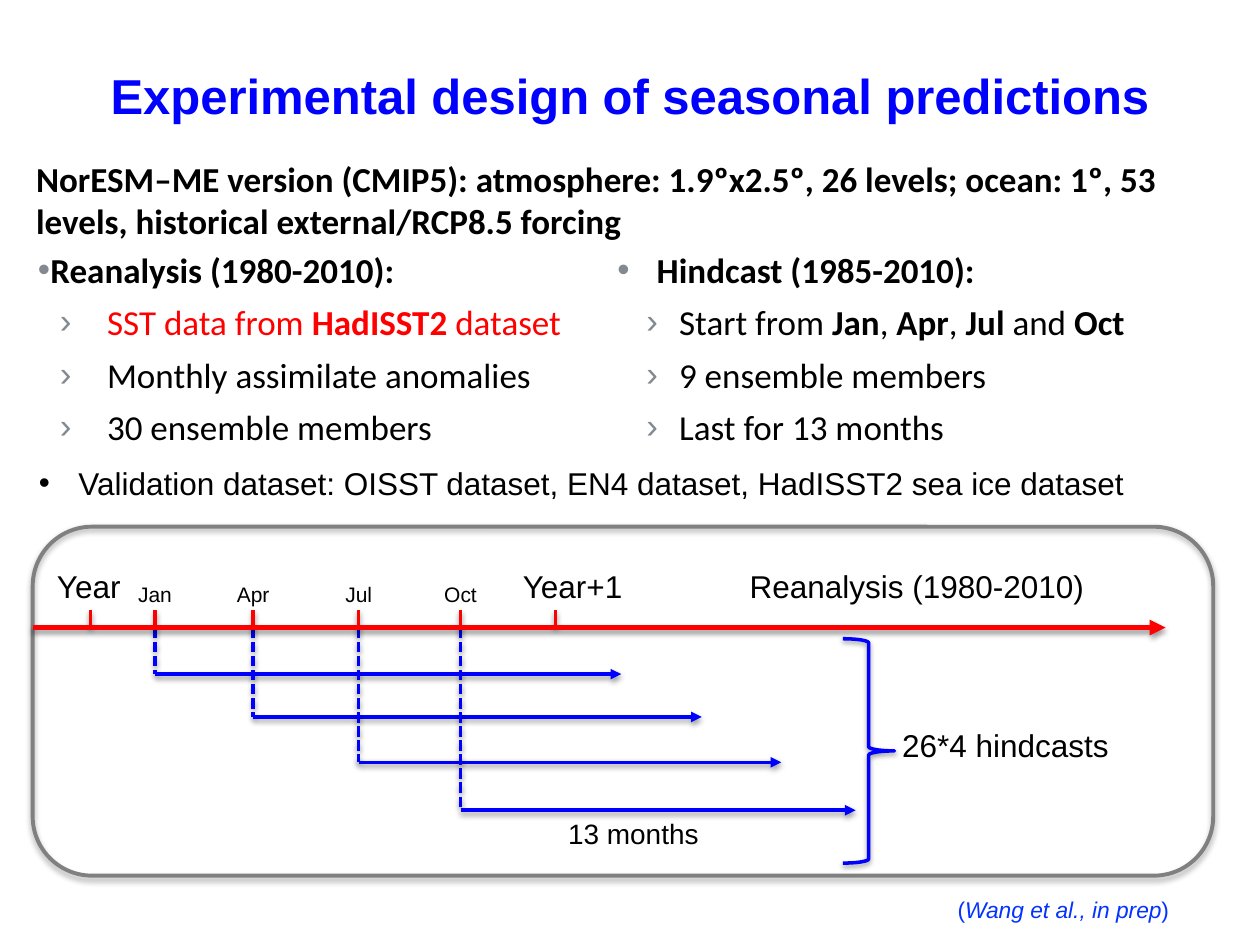
from lxml.etree import SubElement
from pptx import Presentation
from pptx.dml.color import RGBColor
from pptx.enum.dml import MSO_LINE
from pptx.enum.shapes import MSO_CONNECTOR, MSO_SHAPE
from pptx.enum.text import MSO_ANCHOR, PP_ALIGN
from pptx.oxml.ns import qn
from pptx.util import Pt

BLACK, BLUE, RED = "000000", "0000FF", "FF0000"
GREY, BULLET_GREY, CITE_BLUE = "808080", "828990", "0432FF"


def rgb(value):
    return RGBColor.from_string(value)


class SlideBuilder:
    heading_font = "Arial"
    body_font = "Calibri"

    def __init__(self, slide):
        self.slide = slide

    def text(self, box, lines, size=18, font=heading_font, color=BLACK, inset=3.6,
             align=PP_ALIGN.LEFT, anchor=MSO_ANCHOR.TOP, wrap=True, emphasis="bold"):
        frame = self.slide.shapes.add_textbox(*map(Pt, box)).text_frame
        frame.word_wrap = wrap
        frame.vertical_anchor = anchor
        frame.margin_left = frame.margin_right = Pt(inset)
        frame.margin_top = frame.margin_bottom = Pt(min(inset, 3.6))
        for index, line in enumerate(lines):
            paragraph = frame.add_paragraph() if index else frame.paragraphs[0]
            paragraph.alignment = align
            if index:
                paragraph.space_before = Pt(6)
            content, bullet, line_color = line if isinstance(line, tuple) else (line, None, color)
            if bullet:
                self.bullet(paragraph, *bullet)
            for position, piece in enumerate(content.split("|")):
                if piece:
                    run = paragraph.add_run()
                    run.text = piece
                    run.font.name = font
                    run.font.size = Pt(size)
                    run.font.color.rgb = rgb(line_color)
                    setattr(run.font, emphasis, position % 2 == 1)

    def bullet(self, paragraph, mark, left, hang, color):
        properties = paragraph._p.get_or_add_pPr()
        properties.set("marL", str(Pt(left)))
        properties.set("indent", str(-Pt(hang)))
        SubElement(SubElement(properties, qn("a:buClr")), qn("a:srgbClr"), val=color)
        SubElement(properties, qn("a:buFont"), typeface=self.heading_font)
        SubElement(properties, qn("a:buChar"), char=mark)

    def shadow(self, drawn, alpha, distance):
        effects = SubElement(drawn._element.spPr, qn("a:effectLst"))
        outer = SubElement(effects, qn("a:outerShdw"), blurRad=str(Pt(3)),
                           dist=str(Pt(distance)), dir="5400000", rotWithShape="0")
        tint = SubElement(outer, qn("a:srgbClr"), val=BLACK)
        SubElement(tint, qn("a:alpha"), val=str(alpha * 1000))

    def line(self, start, end, color, width=2, dashed=False, arrow=False):
        drawn = self.slide.shapes.add_connector(
            MSO_CONNECTOR.STRAIGHT, *map(Pt, (*start, *end)))
        drawn.line.color.rgb = rgb(color)
        drawn.line.width = Pt(width)
        if dashed:
            drawn.line.dash_style = MSO_LINE.SQUARE_DOT
        if arrow:
            SubElement(drawn._element.spPr.find(qn("a:ln")), qn("a:tailEnd"), type="triangle")
        self.shadow(drawn, 38, 1.6)

    def outline(self, preset, box, color, width, adjustment, alpha, distance):
        drawn = self.slide.shapes.add_shape(preset, *map(Pt, box))
        drawn.adjustments[0] = adjustment
        drawn.fill.background()
        drawn.line.color.rgb = rgb(color)
        drawn.line.width = Pt(width)
        self.shadow(drawn, alpha, distance)


def main():
    presentation = Presentation()
    presentation.slide_width, presentation.slide_height = Pt(720), Pt(540)
    builder = SlideBuilder(presentation.slides.add_slide(presentation.slide_layouts[6]))

    builder.text((42.5, 32.4, 635, 38.9), ["|Experimental design of seasonal predictions"],
                 size=28, color=BLUE, inset=0, align=PP_ALIGN.CENTER, anchor=MSO_ANCHOR.BOTTOM)
    builder.text((13.5, 86.4, 686, 55.4),
                 ["|NorESM–ME version (CMIP5): atmosphere: 1.9ºx2.5º, 26 levels; "
                  "ocean: 1º, 53 levels, historical external/RCP8.5 forcing"],
                 size=20, font=builder.body_font, inset=7.2)

    reanalysis_head = ("•", 7.2, 7.2, BULLET_GREY)
    reanalysis_item = ("›", 39.6, 27, BULLET_GREY)
    hindcast_head = ("•", 22.5, 22.5, BULLET_GREY)
    hindcast_item = ("›", 35.3, 18.7, BULLET_GREY)
    columns = [
        (21.6, [("|Reanalysis (1980-2010):", reanalysis_head, BLACK),
                ("SST data from |HadISST2| dataset", reanalysis_item, RED),
                ("Monthly assimilate anomalies", reanalysis_item, BLACK),
                ("30 ensemble members", reanalysis_item, BLACK)]),
        (352.8, [("|Hindcast (1985-2010):", hindcast_head, BLACK),
                 ("Start from |Jan|, |Apr|, |Jul| and |Oct", hindcast_item, BLACK),
                 ("9 ensemble members", hindcast_item, BLACK),
                 ("Last for 13 months", hindcast_item, BLACK)]),
    ]
    for left, lines in columns:
        builder.text((left, 141.8, 357, 134.6), lines, size=20, font=builder.body_font, inset=0)
    builder.text((18.7, 261.4, 700, 28.8),
                 [("Validation dataset: OISST dataset, EN4 dataset, HadISST2 sea ice dataset",
                   ("•", 22.5, 22.5, BLACK), BLACK)])

    builder.outline(MSO_SHAPE.ROUNDED_RECTANGLE, (18.7, 301, 674.6, 199.4), GREY, 2.25, 0.17, 35, 1.8)
    axis, tick_top = 358.6, 348.8
    starts = [("Jan", 88.6, 385.2, 355), ("Apr", 144.7, 409.7, 401),
              ("Jul", 205, 435.6, 446.4), ("Oct", 263.2, 463, 488.9)]
    for month, start, row, finish in starts:
        builder.text((start - 14, 329, 28, 21.6), [month], size=12,
                     align=PP_ALIGN.CENTER, wrap=False)
        builder.line((start, axis), (start, row), BLUE, dashed=True)
        builder.line((start, row), (finish, row), BLUE, arrow=True)
    for tick in [51.8, 317.5] + [start for _, start, _, _ in starts]:
        builder.line((tick, tick_top), (tick, axis), RED)
    builder.line((18.7, axis), (666, axis), RED, width=3, arrow=True)

    builder.text((21.6, 320.4, 58.3, 31), ["Year"], align=PP_ALIGN.CENTER)
    builder.text((295.2, 320.4, 77, 31), ["Year+1"])
    builder.text((424.8, 320.4, 232.6, 28.8), ["Reanalysis (1980-2010)"])
    builder.text((321.1, 463, 98.6, 28), ["13 months"], size=16)
    builder.outline(MSO_SHAPE.RIGHT_BRACE, (481.7, 365, 29.4, 128.2), BLUE, 2, 0.08, 38, 1.6)
    builder.text((511.9, 411.1, 164.2, 28.8), ["26*4 hindcasts"])
    builder.text((543.6, 508.3, 176.4, 23), ["(|Wang et al., in prep|)"],
                 size=13, color=CITE_BLUE, emphasis="italic")

    presentation.save("out.pptx")


if __name__ == "__main__":
    main()
